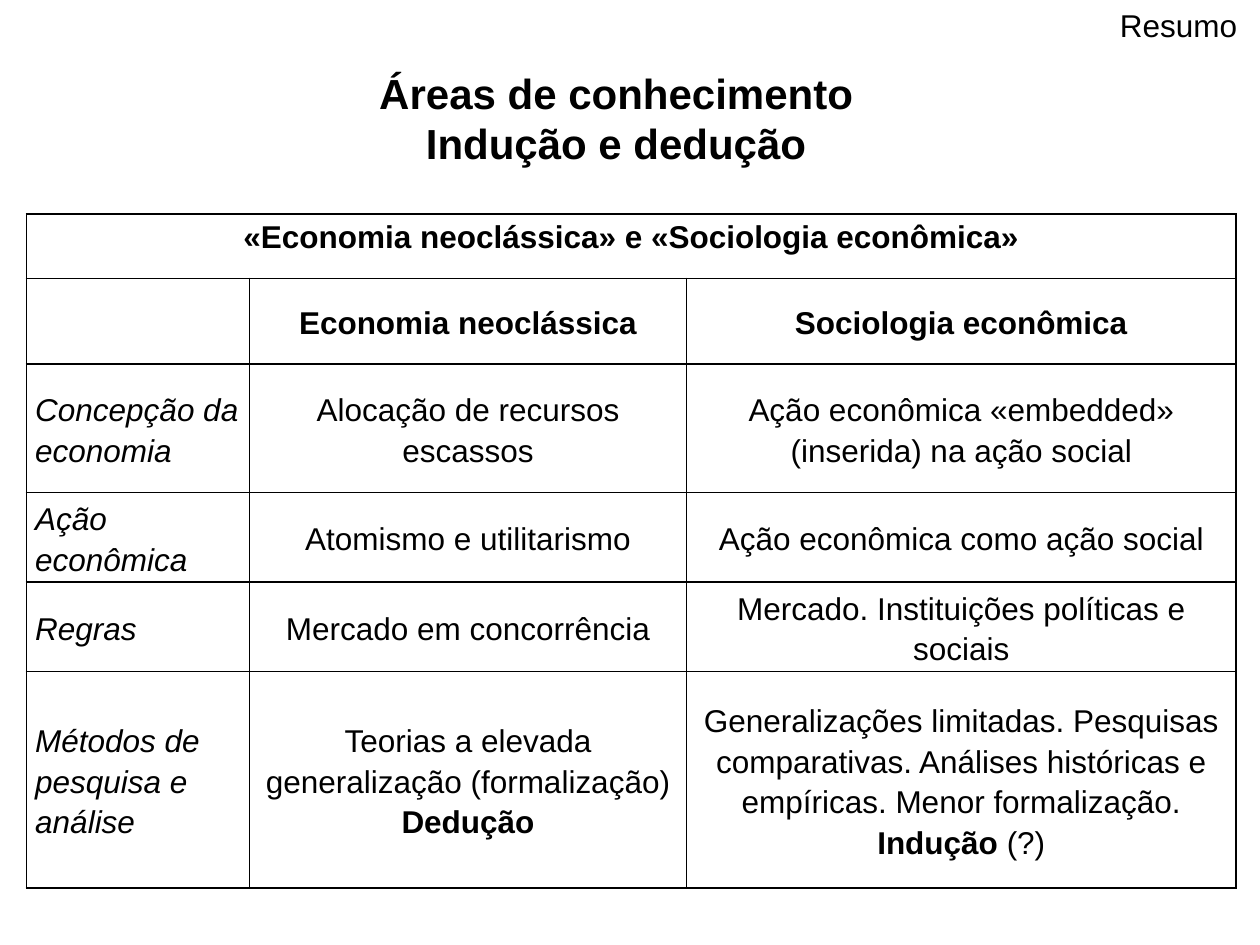
from lxml import etree
from pptx import Presentation
from pptx import util as u
from pptx.dml import color
from pptx.enum import text
from pptx.oxml import ns

COLORS = {"ink": "000000", "paper": "FFFFFF"}
CENTER, LEFT = text.PP_ALIGN.CENTER, text.PP_ALIGN.LEFT
MIDDLE, TOP = text.MSO_ANCHOR.MIDDLE, text.MSO_ANCHOR.TOP

COLUMNS = [1.77, 3.47, 4.36]
ROWS = [0.51, 0.68, 1.02, 0.71, 0.71, 1.72]
HEADING = "«Economia neoclássica» e «Sociologia econômica»"
SCHOOLS = ["", "Economia neoclássica", "Sociologia econômica"]
COMPARISON = [
    ["Concepção da economia", "Alocação de recursos escassos",
     "Ação econômica «embedded» (inserida) na ação social"],
    ["Ação econômica", "Atomismo e utilitarismo", "Ação econômica como ação social"],
    ["Regras", "Mercado em concorrência", "Mercado. Instituições políticas e sociais"],
    ["Métodos de pesquisa e análise",
     [["Teorias a elevada generalização (formalização)"], [("Dedução", True)]],
     [["Generalizações limitadas. Pesquisas comparativas. Análises históricas e "
       "empíricas. Menor formalização."], [("Indução", True), " (?)"]]],
]


def apply(target, values):
    for name, value in values.items():
        setattr(target, name, value)


def write(tf, paragraphs, size, align=LEFT, spacing=None, bold=False, italic=False):
    if isinstance(paragraphs, str):
        paragraphs = [[paragraphs]]
    for i, runs in enumerate(paragraphs):
        p = tf.paragraphs[0] if i == 0 else tf.add_paragraph()
        apply(p, {"alignment": align, "line_spacing": spacing})
        for item in runs:
            words, strong = (item, bold) if isinstance(item, str) else item
            r = p.add_run()
            r.text = words
            apply(r.font, {"name": "Arial", "size": u.Pt(size),
                           "bold": strong, "italic": italic})
            r.font.color.rgb = color.RGBColor.from_string(COLORS["ink"])


def add_text(s, box, paragraphs, size, wrap, anchor, **style):
    sp = s.shapes.add_textbox(*map(u.Inches, box))
    apply(sp.text_frame, {"word_wrap": wrap, "vertical_anchor": anchor})
    write(sp.text_frame, paragraphs, size, **style)
    return sp


def add_tag(s, box):
    sp = add_text(s, box, "Resumo", 18, False, TOP)
    sp.text_frame.auto_size = text.MSO_AUTO_SIZE.SHAPE_TO_FIT_TEXT


def add_title(s, box):
    add_text(s, box, [["Áreas de conhecimento"], ["Indução e dedução"]],
             24, True, MIDDLE, align=CENTER, bold=True)


def set_borders(cell):
    tc_pr = cell._tc.get_or_add_tcPr()
    for i, side in enumerate(("lnL", "lnR", "lnT", "lnB")):
        line = etree.Element(ns.qn("a:" + side), w=str(u.Pt(1)))
        fill = etree.SubElement(line, ns.qn("a:solidFill"))
        etree.SubElement(fill, ns.qn("a:srgbClr"), val=COLORS["ink"])
        tc_pr.insert(i, line)


def add_comparison(s, box):
    rows = [[HEADING, "", ""], SCHOOLS, *COMPARISON]
    frame = s.shapes.add_table(len(ROWS), len(COLUMNS), *map(u.Inches, box))
    table = frame.table
    apply(table, {"first_row": False, "horz_banding": False})
    for column, width in zip(table.columns, COLUMNS):
        column.width = u.Inches(width)
    for row, height in zip(table.rows, ROWS):
        row.height = u.Inches(height)
    table.cell(0, 0).merge(table.cell(0, len(COLUMNS) - 1))
    for i, row in enumerate(rows):
        for j, content in enumerate(row):
            cell = table.cell(i, j)
            apply(cell, {"margin_left": u.Inches(0.07), "margin_right": u.Inches(0.07),
                         "margin_top": 0, "margin_bottom": 0,
                         "vertical_anchor": MIDDLE if i else TOP})
            cell.fill.solid()
            cell.fill.fore_color.rgb = color.RGBColor.from_string(COLORS["paper"])
            set_borders(cell)
            if content:
                label = i > 1 and j == 0
                write(cell.text_frame, content, 18, LEFT if label else CENTER,
                      1.15, bold=i < 2, italic=label)


def main():
    prs = Presentation()
    apply(prs, {"slide_width": u.Inches(10), "slide_height": u.Inches(7.5)})
    s = prs.slides.add_slide(prs.slide_layouts[6])
    add_comparison(s, (0.21, 1.7, sum(COLUMNS), sum(ROWS)))
    add_tag(s, (8.79, 0, 1.21, 0.4))
    add_title(s, (0.39, 0.31, 9, 1.25))
    prs.save("out.pptx")


if __name__ == "__main__":
    main()
